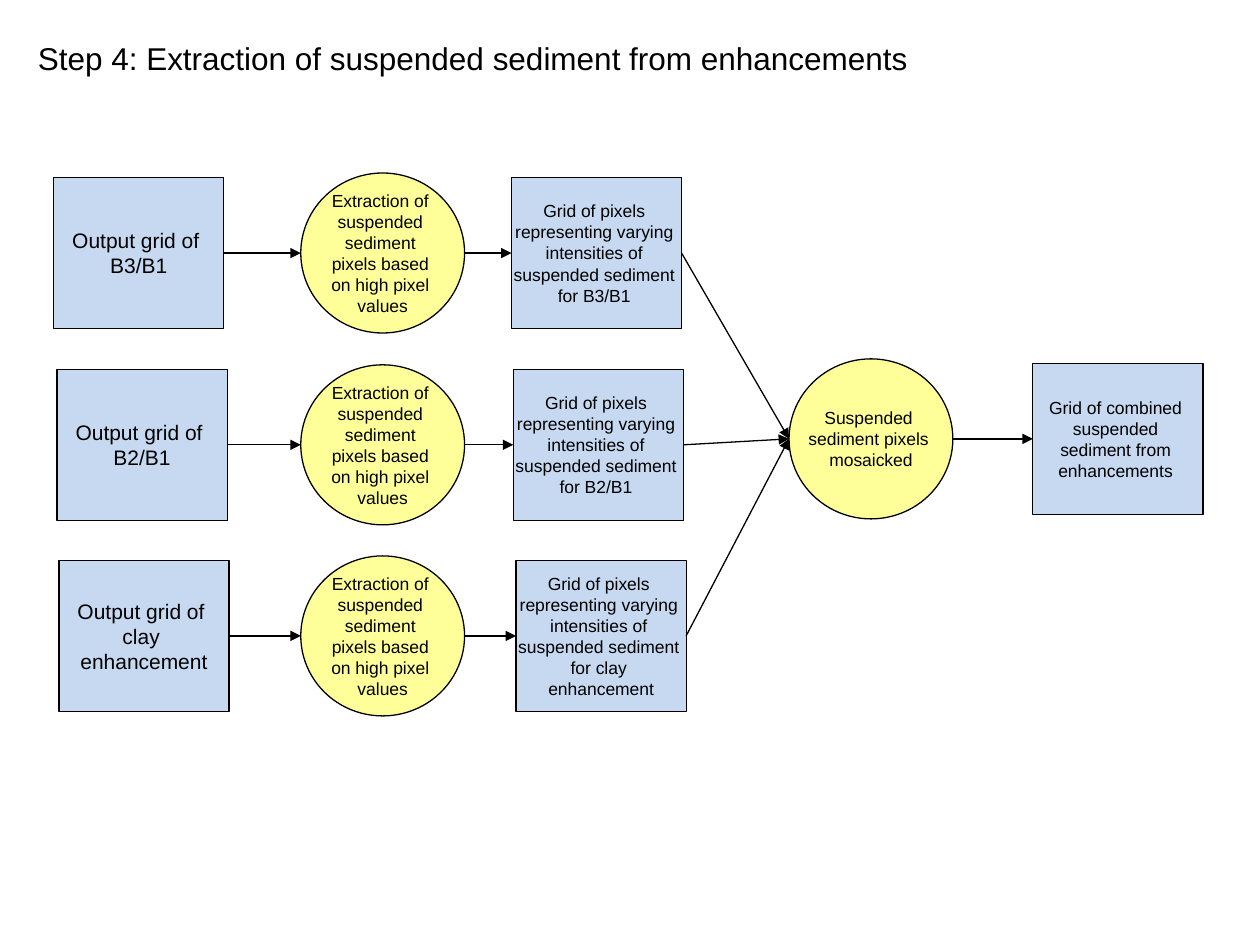
from dataclasses import dataclass

from lxml import etree
from pptx import Presentation
from pptx.dml.color import RGBColor
from pptx.enum import shapes, text
from pptx.oxml import ns
from pptx.util import Pt


@dataclass(frozen=True)
class Theme:
    font: str = "Arial"
    ink: RGBColor = RGBColor(0x00, 0x00, 0x00)
    grid: RGBColor = RGBColor(0xC6, 0xD9, 0xF1)
    step: RGBColor = RGBColor(0xFF, 0xFF, 0x99)
    head: int = 18
    large: int = 12
    small: int = 10
    line: float = 0.75


THEME = Theme()
BOX = (97.2, 86.4)
OVAL = (93.6, 91.44)

# Row: centre, left of input, left of result, input lines, result ending
ROWS = [
    (144.6, 30.7, 292.3, ["B3/B1"], ["for B3/B1 "]),
    (254.2, 32.6, 293.3, ["B2/B1"], ["for B2/B1 "]),
    (363.4, 33.7, 294.9, ["clay ", "enhancement"],
     ["for clay ", "enhancement"]),
]
STEP_X = 171.9
MERGE_X, LAST_X, END_Y = 450.9, 590.2, 250.8

EXTRACT = ["Extraction of ", "suspended ", "sediment ", "pixels based ",
           "on high pixel ", "values"]
GRID = ["Grid of pixels ", "representing varying ", "intensities of ",
        "suspended sediment "]


def style(frame, size, align):
    for para in frame.paragraphs:
        para.alignment = align
        for run in para.runs:
            run.font.name = THEME.font
            run.font.size = Pt(size)
            run.font.color.rgb = THEME.ink


def add_title(slide, words):
    title = slide.shapes.title
    title.left, title.top = Pt(14.4), Pt(18.7)
    title.width, title.height = Pt(673.2), Pt(28.8)
    frame = title.text_frame
    frame.text = words
    frame.word_wrap = True
    frame.vertical_anchor = text.MSO_ANCHOR.MIDDLE
    style(frame, THEME.head, text.PP_ALIGN.LEFT)


def add_node(slide, kind, dims, fill, left, mid, lines, size):
    """Add a shape whose vertical centre is at mid."""
    wide, high = dims
    node = slide.shapes.add_shape(
        kind, Pt(left), Pt(mid - high / 2), Pt(wide), Pt(high))
    node.shadow.inherit = False
    node.fill.solid()
    node.fill.fore_color.rgb = fill
    node.line.color.rgb = THEME.ink
    node.line.width = Pt(THEME.line)
    frame = node.text_frame
    frame.text = "\n".join(lines)
    frame.word_wrap = False
    frame.vertical_anchor = text.MSO_ANCHOR.MIDDLE
    style(frame, size, text.PP_ALIGN.CENTER)
    return node


def add_grid(slide, left, mid, lines, size=THEME.small):
    return add_node(slide, shapes.MSO_SHAPE.FLOWCHART_PROCESS, BOX,
                    THEME.grid, left, mid, lines, size)


def add_step(slide, left, mid, lines):
    return add_node(slide, shapes.MSO_SHAPE.OVAL, OVAL,
                    THEME.step, left, mid, lines, THEME.small)


def add_arrow(slide, start, end):
    """Link the right side of start to the left side of end."""
    arrow = slide.shapes.add_connector(
        shapes.MSO_CONNECTOR.STRAIGHT,
        start.left + start.width, start.top + start.height // 2,
        end.left, end.top + end.height // 2)
    arrow.line.color.rgb = THEME.ink
    arrow.line.width = Pt(THEME.line)
    etree.SubElement(arrow.line._get_or_add_ln(), ns.qn("a:tailEnd"),
                     type="triangle")
    etree.SubElement(arrow._element.spPr, ns.qn("a:effectLst"))


def main():
    deck = Presentation()
    deck.slide_width, deck.slide_height = Pt(720), Pt(540)
    slide = deck.slides.add_slide(deck.slide_layouts[5])
    add_title(slide,
              "Step 4: Extraction of suspended sediment from enhancements")

    # Merged result
    merge = add_step(slide, MERGE_X, END_Y,
                     ["Suspended ", "sediment pixels ", "mosaicked"])
    last = add_grid(slide, LAST_X, END_Y,
                    ["Grid of combined ", "suspended ", "sediment from ",
                     "enhancements "])
    add_arrow(slide, merge, last)

    # One chain per enhancement, each leading to the merge
    for mid, left, right, name, ending in ROWS:
        source = add_grid(slide, left, mid, ["Output grid of "] + name,
                          THEME.large)
        step = add_step(slide, STEP_X, mid, EXTRACT)
        result = add_grid(slide, right, mid, GRID + ending)
        chain = [source, step, result, merge]
        for start, end in zip(chain, chain[1:]):
            add_arrow(slide, start, end)

    deck.save("out.pptx")


if __name__ == "__main__":
    main()
